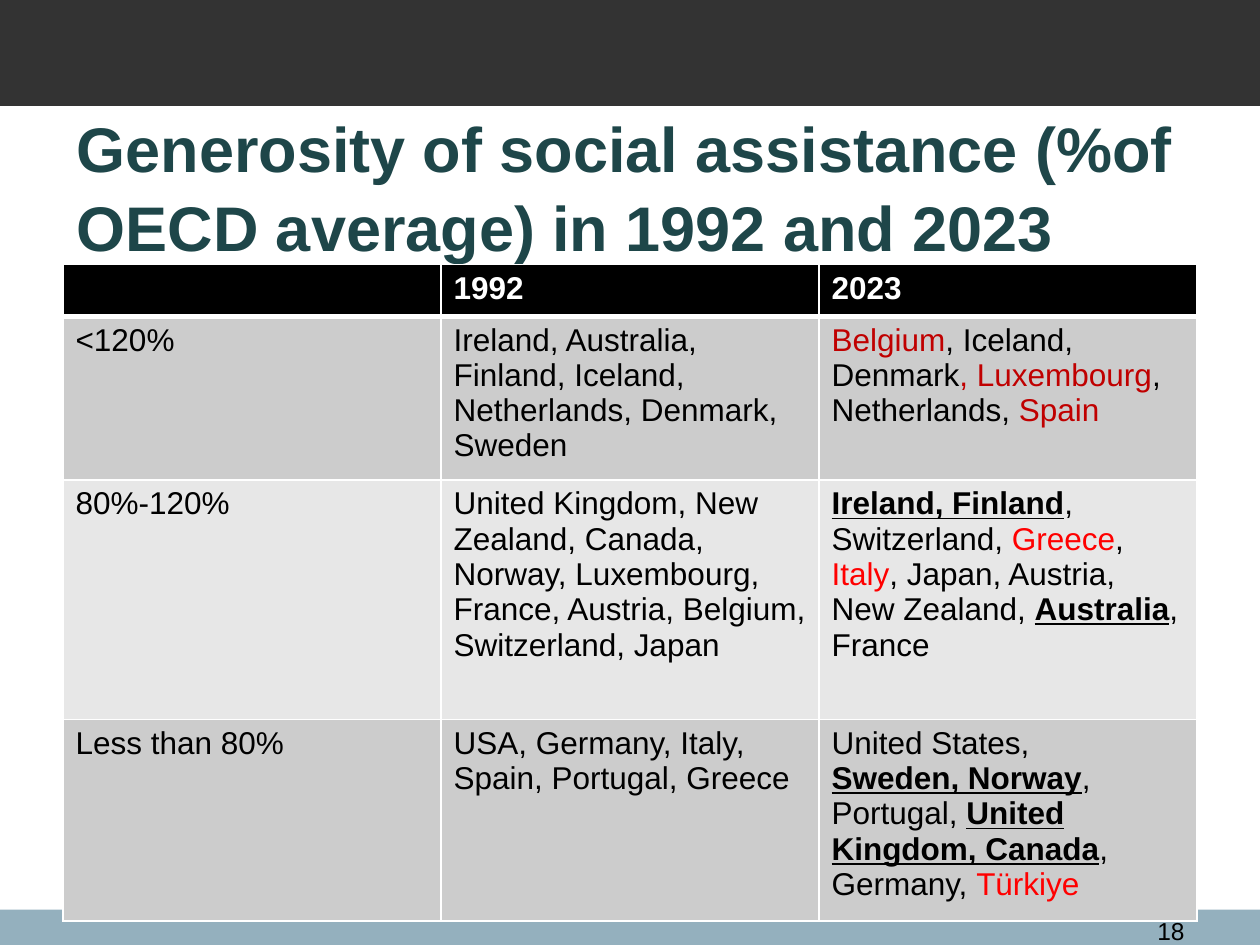
"""Build the slide on the generosity of social assistance in 1992 and 2023."""
from lxml import etree
from pptx import Presentation, util as u
from pptx.dml.color import RGBColor
from pptx.enum import shapes, text
from pptx.oxml import ns

TITLE = "Generosity of social assistance (%of OECD average) in 1992 and 2023"
PAGE_NUMBER = "18"
BLACK, WHITE, DARK_RED, RED = "000000", "FFFFFF", "C00000", "FF0000"
BANDS = [(0, 0.84, "333333"), (7.22, 0.28, "94B0BE")]
COLUMN_WIDTHS = [3, 3, 3]
ROW_HEIGHTS = [0.41, 1.3, 1.9, 1.6]
ROW_FILLS = [BLACK, "CCCCCC", "E7E7E7", "CCCCCC"]
MOVED = "moved"

# Each cell is a list of paragraphs, each paragraph a list of (text, mark) runs.
ROWS = [
    ["", "1992", "2023"],
    ["<120%",
     "Ireland, Australia, Finland, Iceland, Netherlands, Denmark, Sweden",
     [[("Belgium", DARK_RED), (", Iceland, Denmark", None), (", Luxembourg", DARK_RED),
       (", Netherlands, ", None), ("Spain", DARK_RED)]]],
    ["80%-120%",
     "United Kingdom, New Zealand, Canada, Norway, Luxembourg, France, Austria, "
     "Belgium, Switzerland, Japan",
     [[("Ireland, Finland", MOVED), (",", None)],
      [("Switzerland, ", None), ("Greece", RED), (", ", None), ("Italy", RED),
       (", Japan, Austria, New Zealand, ", None), ("Australia", MOVED), (", France", None)]]],
    ["Less than 80%",
     "USA, Germany, Italy, Spain, Portugal, Greece",
     [[("United States,", None)],
      [("Sweden, Norway", MOVED), (",", None)],
      [("Portugal, ", None), ("United Kingdom, Canada", MOVED), (",", None)],
      [("Germany, ", None), ("Türkiye", RED)]]],
]


def color(value):
    return RGBColor.from_string(value)


def style(font, size, value, bold=False):
    font.name, font.size, font.bold = "Arial", u.Pt(size), bold
    font.color.rgb = color(value)


def add_band(slide, width, top, height, fill):
    band = slide.shapes.add_shape(
        shapes.MSO_SHAPE.RECTANGLE, 0, u.Inches(top), width, u.Inches(height))
    band.shadow.inherit = False
    band.fill.solid()
    band.fill.fore_color.rgb = color(fill)
    band.line.fill.background()


def add_text(slide, box, words, size, value, bold=False):
    frame = slide.shapes.add_textbox(*map(u.Inches, box)).text_frame
    frame.word_wrap = True
    paragraph = frame.paragraphs[0]
    paragraph.text = words
    style(paragraph.font, size, value, bold)
    return frame


def add_borders(cell, bottom_width):
    properties = cell._tc.get_or_add_tcPr()
    for side, width in (("L", 1), ("R", 1), ("T", 1), ("B", bottom_width)):
        line = etree.SubElement(properties, ns.qn(f"a:ln{side}"), w=str(u.Pt(width)))
        fill = etree.SubElement(line, ns.qn("a:solidFill"))
        etree.SubElement(fill, ns.qn("a:srgbClr"), val=WHITE)


def fill_cell(cell, content, header):
    paragraphs = [[(content, None)]] if isinstance(content, str) else content
    frame = cell.text_frame
    for index, runs in enumerate(paragraphs):
        paragraph = frame.add_paragraph() if index else frame.paragraphs[0]
        style(paragraph.font, 18, WHITE if header else BLACK, header)
        for words, mark in runs:
            run = paragraph.add_run()
            run.text = words
            if mark == MOVED:
                run.font.bold = run.font.underline = True
            elif mark:
                run.font.color.rgb = color(mark)


def add_grid(slide):
    box = (0.5, 2.1, sum(COLUMN_WIDTHS), sum(ROW_HEIGHTS))
    table = slide.shapes.add_table(
        len(ROWS), len(COLUMN_WIDTHS), *map(u.Inches, box)).table
    for column, width in zip(table.columns, COLUMN_WIDTHS):
        column.width = u.Inches(width)
    for index, (row, height) in enumerate(zip(table.rows, ROW_HEIGHTS)):
        row.height = u.Inches(height)
        for cell, content in zip(row.cells, ROWS[index]):
            header = index == 0
            fill_cell(cell, content, header)
            add_borders(cell, 3 if header else 1)
            cell.fill.solid()
            cell.fill.fore_color.rgb = color(ROW_FILLS[index])


def main():
    presentation = Presentation()
    presentation.slide_width, presentation.slide_height = u.Inches(10), u.Inches(7.5)
    slide = presentation.slides.add_slide(presentation.slide_layouts[6])
    for band in BANDS:
        add_band(slide, presentation.slide_width, *band)
    title = add_text(slide, (0.51, 0.84, 9.21, 1.25), TITLE, 36, "1E4649", True)
    title.vertical_anchor = text.MSO_ANCHOR.MIDDLE
    title.paragraphs[0].line_spacing = 1.05
    number = add_text(slide, (8.86, 7.22, 0.64, 0.24), PAGE_NUMBER, 14, BLACK)
    number.paragraphs[0].alignment = text.PP_ALIGN.RIGHT
    add_grid(slide)
    presentation.save("out.pptx")


if __name__ == "__main__":
    main()
